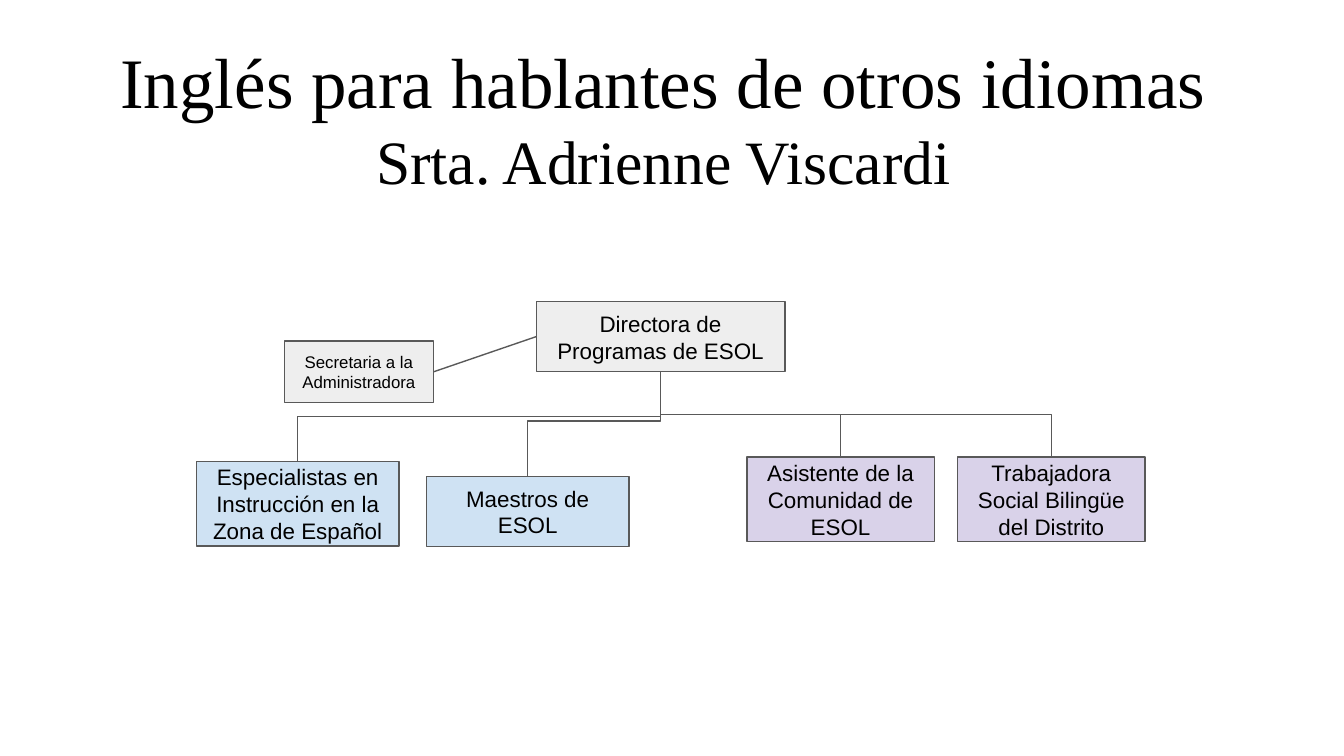
"""Build an organisation chart slide for the ESOL programme."""
from dataclasses import dataclass

from lxml import etree
from pptx import Presentation
from pptx.dml.color import RGBColor
from pptx.enum.shapes import MSO_CONNECTOR, MSO_SHAPE
from pptx.enum.text import MSO_ANCHOR, PP_ALIGN
from pptx.oxml.ns import qn
from pptx.shapes.autoshape import Shape
from pptx.shapes.connector import Connector
from pptx.slide import Slide
from pptx.text.text import TextFrame
from pptx.util import Inches, Pt

RECT = MSO_SHAPE.RECTANGLE
STRAIGHT, ELBOW = MSO_CONNECTOR.STRAIGHT, MSO_CONNECTOR.ELBOW
MIDDLE, TOP_ANCHOR = MSO_ANCHOR.MIDDLE, MSO_ANCHOR.TOP
CENTER = PP_ALIGN.CENTER
TOP, LEFT, BOTTOM, RIGHT = range(4)

BLACK = RGBColor(0x00, 0x00, 0x00)
OUTLINE = RGBColor(0x59, 0x59, 0x59)
GRAY = RGBColor(0xEE, 0xEE, 0xEE)
BLUE = RGBColor(0xCF, 0xE2, 0xF3)
PURPLE = RGBColor(0xD9, 0xD2, 0xE9)

SLIDE_W = Inches(10)
SLIDE_H = SLIDE_W * 9 // 16
CELL = SLIDE_W // 100
INSET = CELL
LINE_W = Pt(0.75)


@dataclass(frozen=True)
class Area:
    """A block of the 100-column grid of square cells."""
    col: float
    row: float
    cols: float
    rows: float

    def emu(self) -> tuple[int, int, int, int]:
        """Return left, top, width and height."""
        left, top, width, height = (
            round(n * CELL) for n in (self.col, self.row, self.cols, self.rows))
        return left, top, width, height


@dataclass(frozen=True)
class Role:
    """A box of the chart; bend is where its link turns on the way down."""
    text: str
    area: Area
    fill: RGBColor
    size: float = 12
    bend: float = 0.5


TITLE_AREA = Area(5.23, 1.8, 88.3, 14.7)
TITLE = (("Inglés para hablantes de otros idiomas", 38),
         ("Srta. Adrienne Viscardi", 33))
DIRECTOR = Role("Directora de Programas de ESOL", Area(39.9, 22.45, 18.5, 5.2), GRAY)
SECRETARY = Role("Secretaria a la Administradora", Area(21.15, 25.37, 11.1, 4.6), GRAY, 9)
TEAM = (
    Role("Especialistas en Instrucción en la Zona de Español",
         Area(14.63, 34.33, 15.05, 6.3), BLUE),
    Role("Maestros de ESOL", Area(31.74, 35.46, 15.05, 5.2), BLUE, bend=0.47),
    Role("Asistente de la Comunidad de ESOL", Area(55.57, 34, 13.95, 6.3), PURPLE),
    Role("Trabajadora Social Bilingüe del Distrito", Area(71.25, 34, 13.95, 6.3), PURPLE),
)


def set_frame(tf: TextFrame, anchor: MSO_ANCHOR) -> None:
    """Set wrapping, insets and anchor of a text frame."""
    tf.word_wrap = True
    tf.vertical_anchor = anchor
    tf.margin_left = tf.margin_right = tf.margin_top = tf.margin_bottom = INSET


def add_line(tf: TextFrame, index: int, text: str, size: float, font: str) -> None:
    """Write one centred paragraph."""
    p = tf.add_paragraph() if index else tf.paragraphs[0]
    p.alignment = CENTER
    r = p.add_run()
    r.text = text
    r.font.size = Pt(size)
    r.font.name = font
    r.font.color.rgb = BLACK


def add_title(s: Slide) -> None:
    """Draw the two-line heading."""
    tf = s.shapes.add_textbox(*TITLE_AREA.emu()).text_frame
    set_frame(tf, TOP_ANCHOR)
    for i, (text, size) in enumerate(TITLE):
        add_line(tf, i, text, size, "Times New Roman")


def add_role(s: Slide, role: Role) -> Shape:
    """Draw one box with its label."""
    sp = s.shapes.add_shape(RECT, *role.area.emu())
    sp.shadow.inherit = False
    sp.fill.solid()
    sp.fill.fore_color.rgb = role.fill
    sp.line.color.rgb = OUTLINE
    sp.line.width = LINE_W
    set_frame(sp.text_frame, MIDDLE)
    add_line(sp.text_frame, 0, role.text, role.size, "Arial")
    return sp


def add_link(s: Slide, kind: MSO_CONNECTOR, start: Shape, start_side: int,
             end: Shape, end_side: int) -> Connector:
    """Join two boxes with a thin line."""
    cxn = s.shapes.add_connector(kind, 0, 0, 0, 0)
    cxn.begin_connect(start, start_side)
    cxn.end_connect(end, end_side)
    cxn.line.color.rgb = OUTLINE
    cxn.line.width = LINE_W
    etree.SubElement(cxn._element.spPr, qn("a:effectLst"))
    return cxn


def add_branch(s: Slide, start: Shape, end: Shape, bend: float) -> None:
    """Join two boxes with a line that runs down, across and down."""
    cxn = add_link(s, ELBOW, start, BOTTOM, end, TOP)
    x1, y1, x2, y2 = cxn.begin_x, cxn.begin_y, cxn.end_x, cxn.end_y
    across, down = abs(x2 - x1), y2 - y1
    cxn.left, cxn.top = (x1 + x2 - down) // 2, (y1 + y2 - across) // 2
    cxn.width, cxn.height = down, across
    xfrm = cxn._element.spPr.find(qn("a:xfrm"))
    to_right = x2 > x1
    xfrm.set("rot", str((270 if to_right else 90) * 60000))
    xfrm.set("flipH", str(int(to_right)))
    xfrm.set("flipV", "0")
    geom = cxn._element.spPr.find(qn("a:prstGeom"))
    guides = geom.find(qn("a:avLst"))
    if guides is None:
        guides = etree.SubElement(geom, qn("a:avLst"))
    etree.SubElement(guides, qn("a:gd"), name="adj1", fmla=f"val {round(bend * 100000)}")


def main() -> None:
    """Build and save the slide."""
    prs = Presentation()
    prs.slide_width, prs.slide_height = SLIDE_W, SLIDE_H
    s = prs.slides.add_slide(prs.slide_layouts[6])
    director = add_role(s, DIRECTOR)
    secretary = add_role(s, SECRETARY)
    add_link(s, STRAIGHT, director, LEFT, secretary, RIGHT)
    for role in TEAM:
        add_branch(s, director, add_role(s, role), role.bend)
    add_title(s)
    prs.save("out.pptx")


if __name__ == "__main__":
    main()
